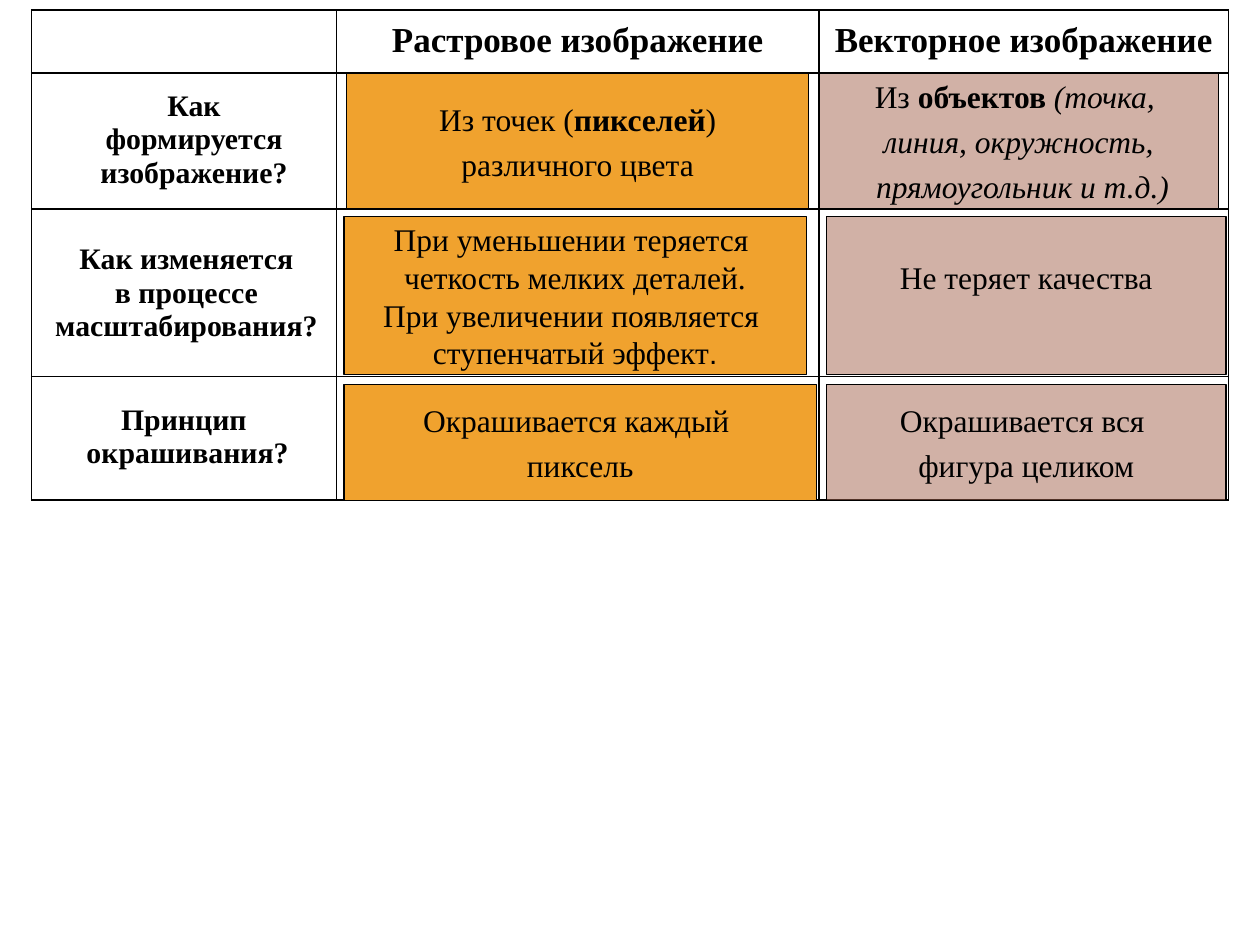
from pptx import Presentation
from pptx.dml.color import RGBColor
from pptx.enum.shapes import MSO_SHAPE
from pptx.enum.text import MSO_ANCHOR, PP_ALIGN
from pptx.oxml import parse_xml
from pptx.oxml.ns import nsdecls, qn
from pptx.util import Inches, Pt
from lxml import etree

BLACK = RGBColor(0x00, 0x00, 0x00)
ORANGE = RGBColor(0xF0, 0xA2, 0x2E)
BROWN = RGBColor(0xA5, 0x64, 0x4E)
SERIF = "Times New Roman"

TABLE_LEFT, TABLE_TOP = 0.25, 0.08
COLUMN_WIDTHS = [2.42, 3.83, 3.25]
ROW_HEIGHTS = [0.5, 1.08, 1.33, 0.98]

HEADINGS = ["Растровое изображение", "Векторное изображение"]
HEADING_MARGINS = (0.02, 0, 0.02, 0.02)

# Lines of each question, then cell margins: left, top, right, bottom
QUESTIONS = [
    (["Как", "формируется", "изображение?"], (0.2, 0, 0.04, 0.02)),
    (["Как изменяется", "в процессе", "масштабирования?"], (0.08, 0, 0.04, 0)),
    (["Принцип", " окрашивания?"], (0.04, 0, 0.04, 0.02)),
]

# Each run is its text and the font settings that differ from the default
ITALIC = {"italic": True}
BOLD = {"bold": True}
RASTER = [
    [[("Из точек (", {}), ("пикселей", BOLD), (")", {})],
     [("различного цвета", {})]],
    [[("При уменьшении теряется ", {})],
     [("четкость мелких деталей.", {})],
     [("При увеличении появляется ", {})],
     [("ступенчатый эффект", {}), (".", {"size": 17, "name": "Arial"})]],
    [[("Окрашивается каждый ", {})], [("пиксель", {})]],
]
VECTOR = [
    [[("Из ", {}), ("объектов ", BOLD), ("(точка, ", ITALIC)],
     [("линия, окружность,", ITALIC)],
     [(" прямоугольник и т.д.)", ITALIC)]],
    [[("Не теряет качества", {})]],
    [[("Окрашивается вся ", {})], [("фигура целиком", {})]],
]

ANSWER_ROWS = [(0.58, 1.08), (1.72, 1.25), (3.05, 0.92)]  # top, height
LINE_GAPS = [4, 0, 4]
# Left and width per row, fill, opacity in percent, answers
ANSWER_COLUMNS = [
    ([(2.75, 3.67), (2.73, 3.67), (2.73, 3.75)], ORANGE, 100, RASTER),
    ([(6.5, 3.17), (6.56, 3.17), (6.56, 3.17)], BROWN, 50, VECTOR),
]
RAISED_ANSWER, RAISED_MARGIN = VECTOR[1], 0.35


def write_lines(frame, lines, size, bold=False, gap=0):
    for index, runs in enumerate(lines):
        paragraph = frame.paragraphs[0] if index == 0 else frame.add_paragraph()
        paragraph.alignment = PP_ALIGN.CENTER
        if index and gap:
            paragraph.space_before = Pt(gap)
        for text, style in runs:
            run = paragraph.add_run()
            run.text = text
            font = run.font
            font.name = style.get("name", SERIF)
            font.size = Pt(style.get("size", size))
            font.bold = style.get("bold", bold)
            font.italic = style.get("italic", False)
            font.color.rgb = BLACK


def fill_cell(cell, lines, size, margins):
    cell.vertical_anchor = MSO_ANCHOR.MIDDLE
    (cell.margin_left, cell.margin_top,
     cell.margin_right, cell.margin_bottom) = map(Inches, margins)
    write_lines(cell.text_frame, [[(line, {})] for line in lines], size, bold=True)


def outline_cell(cell):
    properties = cell._tc.get_or_add_tcPr()
    for position, side in enumerate(("lnL", "lnR", "lnT", "lnB")):
        properties.insert(position, parse_xml(
            f'<a:{side} {nsdecls("a")} w="{Pt(1)}"><a:solidFill>'
            f'<a:srgbClr val="{BLACK}"/></a:solidFill></a:{side}>'))


def add_table(slide):
    table = slide.shapes.add_table(
        len(ROW_HEIGHTS), len(COLUMN_WIDTHS), Inches(TABLE_LEFT), Inches(TABLE_TOP),
        Inches(sum(COLUMN_WIDTHS)), Inches(sum(ROW_HEIGHTS))).table
    table.first_row = table.horz_banding = False
    for column, width in zip(table.columns, COLUMN_WIDTHS):
        column.width = Inches(width)
    for row, height in zip(table.rows, ROW_HEIGHTS):
        row.height = Inches(height)
    for cell in table.iter_cells():
        cell.fill.background()
        outline_cell(cell)
    for column, heading in enumerate(HEADINGS, 1):
        fill_cell(table.cell(0, column), [heading], 20, HEADING_MARGINS)
    for row, (lines, margins) in enumerate(QUESTIONS, 1):
        fill_cell(table.cell(row, 0), lines, 17, margins)


def add_answer(slide, left, top, width, height, color, opacity, lines, gap):
    box = slide.shapes.add_shape(MSO_SHAPE.RECTANGLE, Inches(left), Inches(top),
                                 Inches(width), Inches(height))
    box.shadow.inherit = False
    box.fill.solid()
    box.fill.fore_color.rgb = color
    if opacity < 100:
        tint = box._element.spPr.find(qn("a:solidFill")).find(qn("a:srgbClr"))
        etree.SubElement(tint, qn("a:alpha")).set("val", str(opacity * 1000))
    box.line.color.rgb = BLACK
    box.line.width = Pt(0.75)
    frame = box.text_frame
    frame.word_wrap = False
    frame.vertical_anchor = MSO_ANCHOR.MIDDLE
    if lines is RAISED_ANSWER:
        frame.margin_bottom = Inches(RAISED_MARGIN)
    write_lines(frame, lines, 18, gap=gap)


def main():
    deck = Presentation()
    deck.slide_width, deck.slide_height = Inches(10), Inches(7.5)
    slide = deck.slides.add_slide(deck.slide_layouts[6])
    add_table(slide)
    for spans, color, opacity, answers in ANSWER_COLUMNS:
        for (left, width), (top, height), lines, gap in zip(
                spans, ANSWER_ROWS, answers, LINE_GAPS):
            add_answer(slide, left, top, width, height, color, opacity, lines, gap)
    deck.save("out.pptx")


if __name__ == "__main__":
    main()
